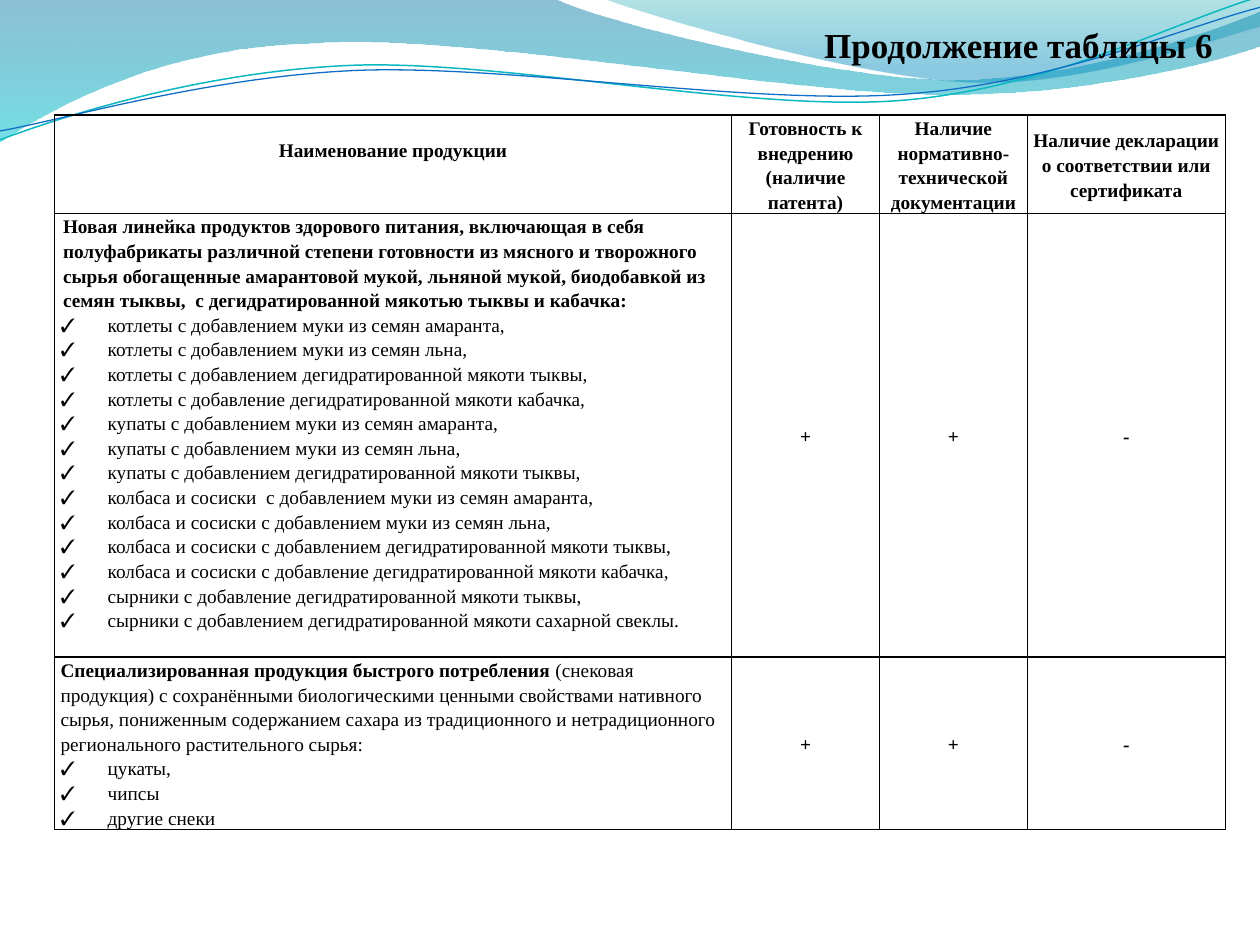
from lxml.etree import SubElement
from pptx import Presentation
from pptx.dml.color import RGBColor
from pptx.enum.text import MSO_ANCHOR as Anchor, PP_ALIGN as Align
from pptx.oxml.ns import qn
from pptx.util import Cm, Pt

FONT = "Times New Roman"
BLACK = "000000"

WIDE_WAVE = [
    (0, 0), (11.18, -0.03),
    (12.09, 0.43, 16.87, 1.6, 19.25, 1.6), (21.67, 1.6, 24.33, 0.66, 25.4, 0.23),
    (25.43, 0.91),
    (24.97, 1.12, 22.1, 1.93, 18.95, 1.9), (15.8, 1.9, 9.7, 0.71, 6.53, 0.86),
    (3.28, 0.91, 1.17, 2.11, -0.03, 2.87),
]
CORNER_WAVE = [
    (12.17, -0.03),
    (12.93, 0.28, 17.32, 1.57, 19.53, 1.65), (21.74, 1.75, 24.41, 0.81, 25.4, 0.53),
    (25.4, 0),
]
TEAL_STRAND = [
    (0, 2.82),
    (1.22, 2.36, 4.01, 1.45, 7.04, 1.32), (10.03, 1.19, 15.06, 2.26, 18.11, 2.03),
    (21.16, 1.8, 23.83, 0.38, 25.35, -0.05),
]
BLUE_STRAND = [
    (0, 2.64),
    (1.19, 2.44, 4.17, 1.55, 7.19, 1.42), (10.24, 1.3, 15.16, 2.13, 18.21, 1.9),
    (21.23, 1.7, 23.9, 0.53, 25.4, 0.15),
]

HEADINGS = [
    "Наименование продукции",
    "Готовность к внедрению (наличие патента)",
    "Наличие нормативно-технической документации",
    "Наличие декларации о соответствии или сертификата",
]
MARKS = ["+", "+", "-"]
HEALTHY_LINE = (
    "Новая линейка продуктов здорового питания, включающая в себя  полуфабрикаты "
    "различной степени готовности из мясного и творожного сырья обогащенные "
    "амарантовой мукой, льняной мукой, биодобавкой из семян тыквы,  "
    "с дегидратированной мякотью тыквы и кабачка:"
)
HEALTHY_ITEMS = [
    "котлеты с добавлением муки из семян амаранта,",
    "котлеты с добавлением муки из семян льна,",
    "котлеты с добавлением дегидратированной мякоти тыквы,",
    "котлеты с добавление дегидратированной мякоти кабачка,",
    "купаты с добавлением муки из семян амаранта,",
    "купаты с добавлением муки из семян льна,",
    "купаты с добавлением дегидратированной мякоти тыквы,",
    "колбаса и сосиски  с добавлением муки из семян амаранта,",
    "колбаса и сосиски с добавлением муки из семян льна,",
    "колбаса и сосиски с добавлением дегидратированной мякоти тыквы,",
    "колбаса и сосиски с добавление дегидратированной мякоти кабачка,",
    "сырники с добавление дегидратированной мякоти тыквы,",
    "сырники с добавлением дегидратированной мякоти сахарной свеклы.",
]
SNACK_LINE = "Специализированная продукция быстрого потребления"
SNACK_DETAILS = (
    " (снековая продукция) с сохранёнными биологическими ценными свойствами "
    "нативного сырья, пониженным содержанием сахара из традиционного и "
    "нетрадиционного регионального растительного сырья:"
)
SNACK_ITEMS = ["цукаты,", "чипсы", "другие снеки"]


def color(code):
    return RGBColor.from_string(code)


def add_outline(slide, segments, close):
    start, *ends = [(Cm(s[-2]), Cm(s[-1])) for s in segments]
    builder = slide.shapes.build_freeform(*start)
    builder.add_line_segments(ends, close=close)
    outline = builder.convert_to_shape()
    outline.shadow.inherit = False
    sides = list(outline.element.spPr.iter(qn("a:lnTo")))
    for side, segment in zip(sides, segments[1:]):
        if len(segment) == 6:
            bend(side, segment, outline.left, outline.top)
    return outline


def bend(side, segment, left, top):
    side.tag = qn("a:cubicBezTo")
    side.remove(side[0])
    for x, y in zip(segment[::2], segment[1::2]):
        SubElement(side, qn("a:pt"), x=str(Cm(x) - left), y=str(Cm(y) - top))


def add_wave(slide, segments, stops):
    wave = add_outline(slide, segments, True)
    wave.line.fill.background()
    wave.fill.gradient()
    wave.fill.gradient_angle = 270
    for stop, (position, code, opacity) in zip(wave.fill.gradient_stops, stops):
        stop.position = position
        stop.color.rgb = color(code)
    tints = wave.element.spPr.iter(qn("a:srgbClr"))
    for tint, (position, code, opacity) in zip(tints, stops):
        SubElement(tint, qn("a:alpha"), val=str(opacity * 1000))


def add_strand(slide, segments, code, width):
    strand = add_outline(slide, segments, False)
    strand.fill.background()
    strand.line.color.rgb = color(code)
    strand.line.width = Pt(width)


def format_run(run, size, bold):
    run.font.name = FONT
    run.font.size = Pt(size)
    run.font.bold = bold
    run.font.color.rgb = color(BLACK)


def write(paragraph, text, align=Align.LEFT, bold=False):
    paragraph.text = text
    paragraph.alignment = align
    paragraph.line_spacing = 1.15
    format_run(paragraph.runs[0], 11, bold)


def indent(paragraph, left, first=0):
    props = paragraph._p.get_or_add_pPr()
    props.set("marL", str(Cm(left)))
    props.set("indent", str(Cm(first)))
    return props


def add_checklist(cell, items, align):
    for item in items:
        paragraph = cell.text_frame.add_paragraph()
        write(paragraph, item, align)
        props = indent(paragraph, 0.95, -0.95)
        SubElement(props, qn("a:buFont"), typeface=FONT)
        SubElement(props, qn("a:buChar"), char="✓")


def style_cell(cell):
    cell.margin_left = cell.margin_right = Cm(0.12)
    cell.margin_top = cell.margin_bottom = 0
    props = cell._tc.get_or_add_tcPr()
    for side in ("lnL", "lnR", "lnT", "lnB"):
        border = SubElement(props, qn(f"a:{side}"), w=str(Pt(1)))
        SubElement(SubElement(border, qn("a:solidFill")), qn("a:srgbClr"), val=BLACK)
    cell.fill.background()


def write_centered(cell, text):
    cell.vertical_anchor = Anchor.MIDDLE
    write(cell.text_frame.paragraphs[0], text, Align.CENTER, True)


def add_products_table(slide):
    widths, heights = [13.65, 2.98, 2.98, 3.99], [1.78, 8.94, 3.12]
    table = slide.shapes.add_table(
        len(heights), len(widths), Cm(1.1), Cm(2.32), Cm(sum(widths)), Cm(sum(heights))
    ).table
    table.first_row = table.horz_banding = False
    for column, width in zip(table.columns, widths):
        column.width = Cm(width)
    for row, height in zip(table.rows, heights):
        row.height = Cm(height)
    for cell in table.iter_cells():
        style_cell(cell)

    for column, heading in enumerate(HEADINGS):
        write_centered(table.cell(0, column), heading)
    product_heading = table.cell(0, 0)
    product_heading.vertical_anchor = Anchor.TOP
    product_heading.margin_top = Cm(0.45)
    for row in (1, 2):
        for column, mark in enumerate(MARKS, 1):
            write_centered(table.cell(row, column), mark)

    healthy, snacks = table.cell(1, 0), table.cell(2, 0)
    intro = healthy.text_frame.paragraphs[0]
    write(intro, HEALTHY_LINE, bold=True)
    indent(intro, 0.05)
    add_checklist(healthy, HEALTHY_ITEMS, Align.JUSTIFY)
    intro = snacks.text_frame.paragraphs[0]
    write(intro, SNACK_LINE, bold=True)
    details = intro.add_run()
    details.text = SNACK_DETAILS
    format_run(details, 11, False)
    add_checklist(snacks, SNACK_ITEMS, Align.LEFT)


def add_title(slide, text):
    frame = slide.shapes.add_textbox(Cm(15.5), Cm(0.34), Cm(9.2), Cm(1.12)).text_frame
    frame.word_wrap = True
    frame.text = text
    frame.paragraphs[0].alignment = Align.RIGHT
    format_run(frame.paragraphs[0].runs[0], 20, True)


def main():
    deck = Presentation()
    deck.slide_width, deck.slide_height = Cm(25.4), Cm(19.05)
    slide = deck.slides.add_slide(deck.slide_layouts[6])
    add_wave(slide, WIDE_WAVE, [(0, "0074A1", 45), (1, "00C6CF", 55)])
    add_wave(slide, CORNER_WAVE, [(0, "00A1A9", 30), (0.8, "008BBF", 45)])
    add_strand(slide, TEAL_STRAND, "0AB8BF", 0.85)
    add_strand(slide, BLUE_STRAND, "0F6FC6", 0.75)
    add_products_table(slide)
    add_title(slide, "Продолжение таблицы 6")
    deck.save("out.pptx")


if __name__ == "__main__":
    main()
